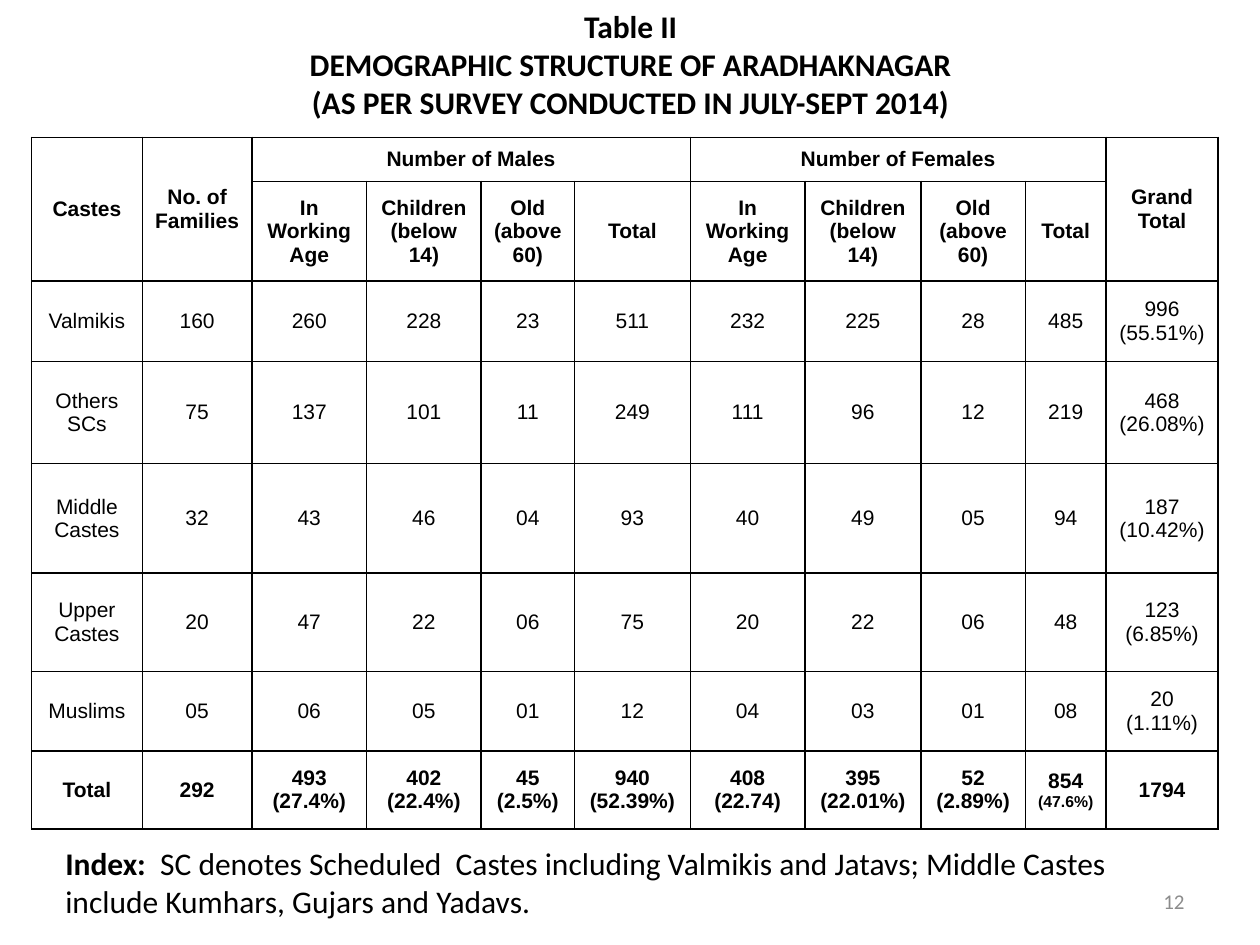
import pptx
import pptx.dml.color
import pptx.enum.text
import pptx.oxml
import pptx.oxml.ns
import pptx.util
from pptx.util import Inches

BLACK = pptx.dml.color.RGBColor(0x00, 0x00, 0x00)
WHITE = pptx.dml.color.RGBColor(0xFF, 0xFF, 0xFF)
GRAY = pptx.dml.color.RGBColor(0x8C, 0x8C, 0x8C)
ALIGN = pptx.enum.text.PP_ALIGN
MIDDLE = pptx.enum.text.MSO_ANCHOR.MIDDLE

TITLE = ("Table II\nDEMOGRAPHIC STRUCTURE OF ARADHAKNAGAR\n"
         "(AS PER SURVEY CONDUCTED IN JULY-SEPT 2014)")
INDEX_NOTE = ("  SC denotes Scheduled  Castes including Valmikis and Jatavs; "
              "Middle Castes include Kumhars, Gujars and Yadavs.")

COLUMN_WIDTHS = [0.88, 0.87, 0.91, 0.91, 0.74, 0.92, 0.91, 0.92, 0.83, 0.64, 0.89]
ROW_HEIGHTS = [0.35, 0.79, 0.64, 0.81, 0.87, 0.78, 0.63, 0.62]
HEADER_ROWS = 2
AGE_GROUPS = ["In Working Age", "Children (below 14)", "Old (above 60)", "Total"]
ROWS = [
    ["Castes", "No. of Families", "Number of Males", "", "", "",
     "Number of Females", "", "", "", "Grand Total"],
    ["", "", *AGE_GROUPS, *AGE_GROUPS, ""],
    ["Valmikis", "160", "260", "228", "23", "511",
     "232", "225", "28", "485", "996\n(55.51%)"],
    ["Others SCs", "75", "137", "101", "11", "249",
     "111", "96", "12", "219", "468\n(26.08%)"],
    ["Middle Castes", "32", "43", "46", "04", "93",
     "40", "49", "05", "94", "187\n(10.42%)"],
    ["Upper Castes", "20", "47", "22", "06", "75",
     "20", "22", "06", "48", "123\n(6.85%)"],
    ["Muslims", "05", "06", "05", "01", "12",
     "04", "03", "01", "08", "20\n(1.11%)"],
    ["Total", "292", "493\n(27.4%)", "402\n(22.4%)", "45\n(2.5%)", "940\n(52.39%)",
     "408\n(22.74)", "395\n(22.01%)", "52\n(2.89%)", "854\n(47.6%)", "1794"],
]
# First and last cell of each merged header, as (row, column)
MERGES = [((0, 0), (1, 0)), ((0, 1), (1, 1)), ((0, 2), (0, 5)),
          ((0, 6), (0, 9)), ((0, 10), (1, 10))]


def style_font(font, name, size, color=BLACK, bold=False):
    font.name = name
    font.size = pptx.util.Pt(size)
    font.bold = bold
    font.color.rgb = color


def style_text(text_frame, name, size, align, color=BLACK, bold=False):
    for paragraph in text_frame.paragraphs:
        paragraph.alignment = align
        for run in paragraph.runs:
            style_font(run.font, name, size, color, bold)


def add_text(slide, left, top, width, height, text, size, align,
             color=BLACK, bold=False, wrap=True):
    shape = slide.shapes.add_textbox(
        Inches(left), Inches(top), Inches(width), Inches(height))
    text_frame = shape.text_frame
    text_frame.word_wrap = wrap
    text_frame.vertical_anchor = MIDDLE
    text_frame.text = text
    style_text(text_frame, "Calibri", size, align, color, bold)
    return text_frame


def add_borders(cell):
    properties = cell._tc.get_or_add_tcPr()
    for position, side in enumerate(("lnL", "lnR", "lnT", "lnB")):
        line = pptx.oxml.parse_xml(
            f'<a:{side} {pptx.oxml.ns.nsdecls("a")} w="12700">'
            f'<a:solidFill><a:srgbClr val="{BLACK}"/></a:solidFill></a:{side}>')
        properties.insert(position, line)


def fill_cell(cell, text, bold):
    cell.text_frame.text = text
    cell.vertical_anchor = MIDDLE
    cell.margin_left = cell.margin_right = Inches(0.08)
    cell.fill.solid()
    cell.fill.fore_color.rgb = WHITE
    style_text(cell.text_frame, "Arial", 12, ALIGN.CENTER, bold=bold)
    add_borders(cell)


def add_population_table(slide):
    table = slide.shapes.add_table(
        len(ROWS), len(COLUMN_WIDTHS), Inches(0.25), Inches(1.09),
        Inches(sum(COLUMN_WIDTHS)), Inches(sum(ROW_HEIGHTS))).table
    for column, width in zip(table.columns, COLUMN_WIDTHS):
        column.width = Inches(width)
    for row, height in zip(table.rows, ROW_HEIGHTS):
        row.height = Inches(height)

    # Headers and the closing total row are bold
    last_row = len(ROWS) - 1
    for row_index, values in enumerate(ROWS):
        bold = row_index < HEADER_ROWS or row_index == last_row
        for column_index, value in enumerate(values):
            fill_cell(table.cell(row_index, column_index), value, bold)
    for first, last in MERGES:
        table.cell(*first).merge(table.cell(*last))

    # Smaller share of females, to fit the narrow column
    female_share = table.cell(last_row, 9).text_frame.paragraphs[1]
    female_share.runs[0].font.size = pptx.util.Pt(9)


def main():
    presentation = pptx.Presentation()
    presentation.slide_width = Inches(10)
    presentation.slide_height = Inches(7.5)
    slide = presentation.slides.add_slide(presentation.slide_layouts[6])

    # Title
    add_text(slide, 2.33, 0, 5.35, 1.01, TITLE, 18, ALIGN.CENTER,
             bold=True, wrap=False)

    # Table
    add_population_table(slide)

    # Index note with a bold lead word
    note = add_text(slide, 0.42, 6.65, 9.17, 0.7, "Index:", 18, ALIGN.LEFT, bold=True)
    run = note.paragraphs[0].add_run()
    run.text = INDEX_NOTE
    style_font(run.font, "Calibri", 18)

    # Slide number
    add_text(slide, 7.17, 6.95, 2.33, 0.4, "12", 12, ALIGN.RIGHT, color=GRAY)

    presentation.save("out.pptx")


if __name__ == "__main__":
    main()
